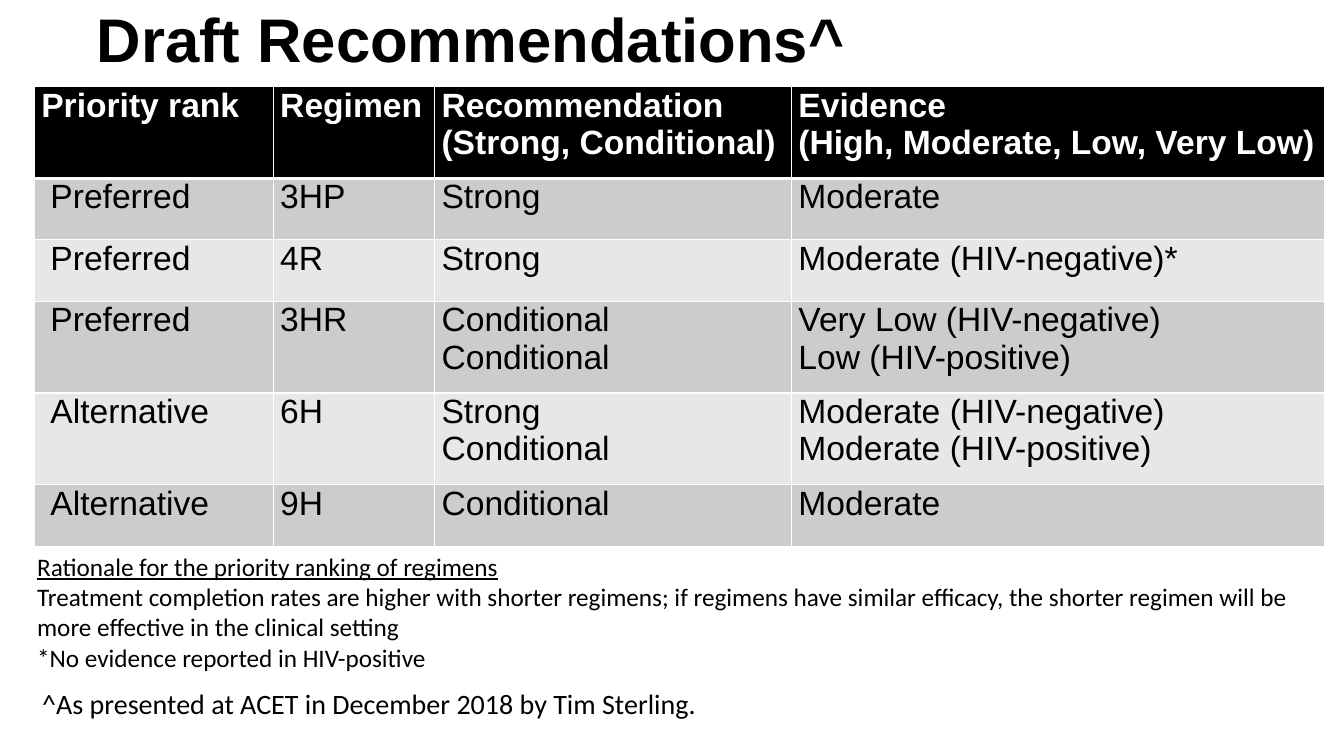
from lxml.etree import SubElement
from pptx import Presentation
from pptx.dml.color import RGBColor
from pptx.enum.text import MSO_ANCHOR
from pptx.oxml.ns import qn
from pptx.util import Pt

PX = 9144
COLUMNS = [237, 160, 354, 529]
SINGLE, DOUBLE = 61, 91
ROWS = [
    ("Priority rank", "Regimen", "Recommendation\n(Strong, Conditional)",
     "Evidence\n(High, Moderate, Low, Very Low)"),
    ("Preferred", "3HP", "Strong", "Moderate"),
    ("Preferred", "4R", "Strong", "Moderate (HIV-negative)*"),
    ("Preferred", "3HR", "Conditional\nConditional",
     "Very Low (HIV-negative)\nLow (HIV-positive)"),
    ("Alternative", "6H", "Strong\nConditional",
     "Moderate (HIV-negative)\nModerate (HIV-positive)"),
    ("Alternative", "9H", "Conditional", "Moderate"),
]
RATIONALE = [
    "Rationale for the priority ranking of regimens",
    "Treatment completion rates are higher with shorter regimens; if regimens have "
    "similar efficacy, the shorter regimen will be more effective in the clinical setting",
    "*No evidence reported in HIV-positive",
]


def px(*lengths):
    return [length * PX for length in lengths]


def color(value):
    return RGBColor.from_string(value)


def set_all(target, values):
    for name, value in values.items():
        setattr(target, name, value)


def write(tf, lines, size, font, hex_color="000000", bold=False):
    for i, line in enumerate(lines):
        p = tf.paragraphs[0] if i == 0 else tf.add_paragraph()
        r = p.add_run()
        r.text = line
        set_all(r.font, {"size": Pt(size), "name": font, "bold": bold})
        r.font.color.rgb = color(hex_color)


def add_text(s, box, lines, size, font, bold=False, anchor=MSO_ANCHOR.TOP):
    tf = s.shapes.add_textbox(*px(*box)).text_frame
    set_all(tf, {"word_wrap": True, "vertical_anchor": anchor})
    write(tf, lines, size, font, bold=bold)
    return tf


def add_borders(cell, widths):
    tcPr = cell._tc.get_or_add_tcPr()
    for side, width in widths.items():
        ln = SubElement(tcPr, qn("a:ln" + side), w=str(Pt(width)))
        SubElement(SubElement(ln, qn("a:solidFill")), qn("a:srgbClr"), val="FFFFFF")


def add_title(s, box):
    tf = add_text(s, box, ["Draft Recommendations^"], 44, "Arial", True, MSO_ANCHOR.MIDDLE)
    tf.paragraphs[0].line_spacing = 0.9


def add_regimens(s, box):
    table = s.shapes.add_table(len(ROWS), len(COLUMNS), *px(*box)).table
    for column, width in zip(table.columns, px(*COLUMNS)):
        column.width = width
    for i, texts in enumerate(ROWS):
        header = i == 0
        height = DOUBLE if any("\n" in text for text in texts) else SINGLE
        table.rows[i].height = height * PX
        fill = "000000" if header else ("E7E7E7", "CCCCCC")[i % 2]
        for j, text in enumerate(texts):
            cell = table.cell(i, j)
            indent = 16 if j == 0 and not header else 7
            set_all(cell, {"margin_left": indent * PX, "margin_right": 7 * PX,
                           "margin_top": 0, "margin_bottom": 0})
            add_borders(cell, {"L": 1, "R": 1, "T": 3 if i == 1 else 1,
                               "B": 3 if header else 1})
            cell.fill.solid()
            cell.fill.fore_color.rgb = color(fill)
            write(cell.text_frame, text.split("\n"), 24, "Arial",
                  "FFFFFF" if header else "000000", header)


def add_notes(s, box):
    left, top, width, height = box
    tf = add_text(s, (left, top, width, 131), RATIONALE, 18, "Calibri")
    tf.paragraphs[0].runs[0].font.underline = True
    add_text(s, (left + 5, top + 134, 821, height - 134),
             ["^As presented at ACET in December 2018 by Tim Sterling."], 20, "Calibri")


def main():
    prs = Presentation()
    set_all(prs, {"slide_width": 1333 * PX, "slide_height": 750 * PX})
    s = prs.slides.add_slide(prs.slide_layouts[6])
    add_title(s, (86, -11, 1158, 107))
    add_regimens(s, (34, 86, 1280, 456))
    add_notes(s, (27, 542, 1280, 208))
    prs.save("out.pptx")


if __name__ == "__main__":
    main()
